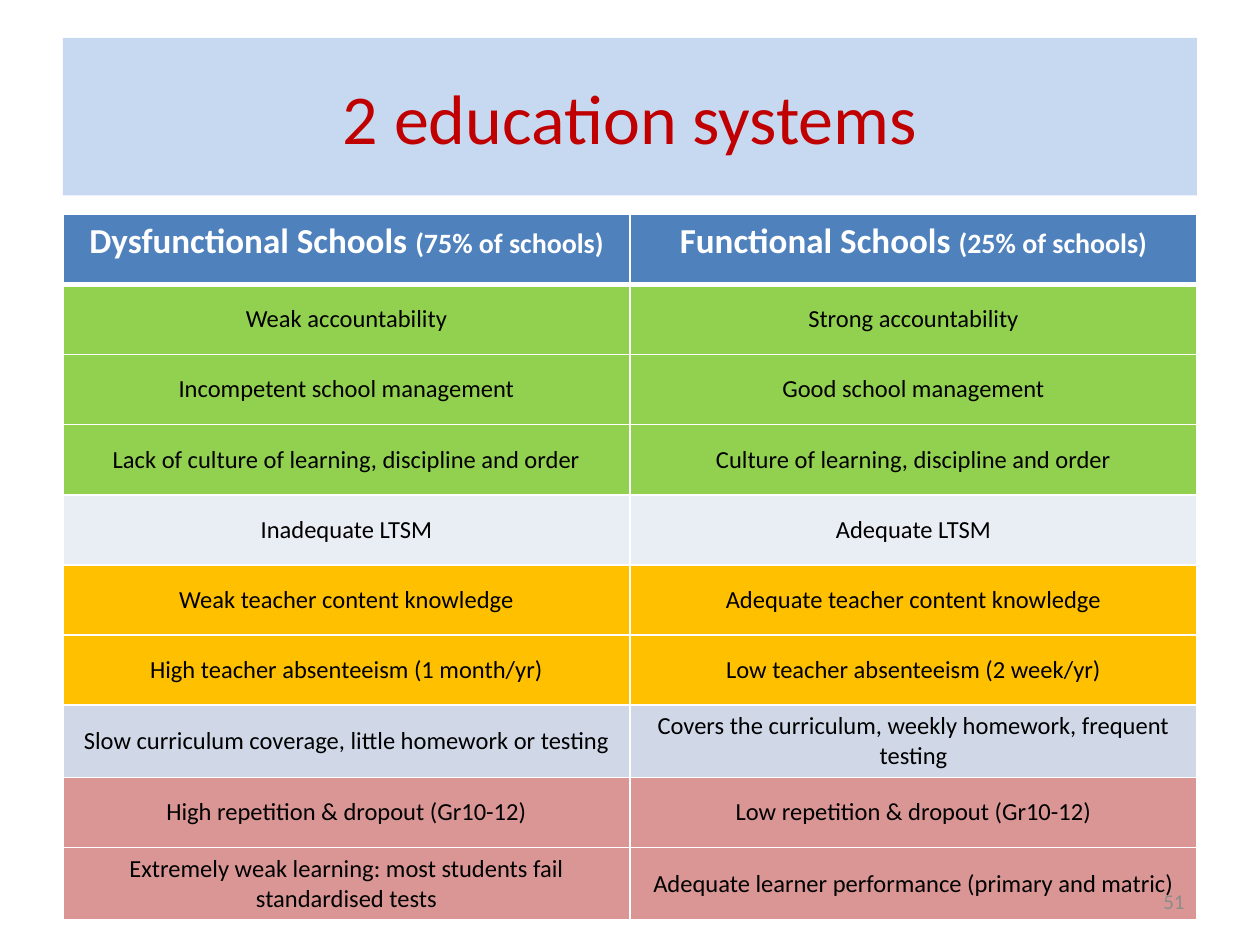
from dataclasses import dataclass

from lxml.etree import SubElement
from pptx import Presentation
from pptx.dml.color import RGBColor
from pptx.enum.shapes import MSO_SHAPE
from pptx.enum.text import MSO_ANCHOR, PP_ALIGN
from pptx.oxml.ns import qn
from pptx.util import Inches, Pt


@dataclass(frozen=True)
class Theme:
    font: str = "Calibri"
    white: str = "FFFFFF"
    black: str = "000000"
    title_text: str = "C00000"
    title_fill: str = "C6D9F1"
    header_fill: str = "4F81BD"
    green: str = "92D050"
    amber: str = "FFC000"
    rose: str = "D99694"
    light_band: str = "E9EDF4"
    dark_band: str = "D0D8E8"
    grey: str = "8C8C8C"
    title_size: int = 40
    header_size: int = 20
    share_size: int = 16
    body_size: int = 14
    number_size: int = 12
    thin: int = 1
    thick: int = 3


class SlideBuilder:
    """Holds the theme and current slide; areas are shares of the slide's size."""

    def __init__(self, deck, theme):
        self.deck = deck
        self.theme = theme
        self.slide = deck.slides.add_slide(deck.slide_layouts[6])

    def area(self, left, top, width, height):
        across, down = self.deck.slide_width, self.deck.slide_height
        return (round(left * across), round(top * down),
                round(width * across), round(height * down))

    def add_text(self, frame, runs, color, align=PP_ALIGN.CENTER, bold=False):
        para = frame.paragraphs[0]
        para.alignment = align
        for text, size in runs:
            span = para.add_run()
            span.text = text
            span.font.name = self.theme.font
            span.font.size = Pt(size)
            span.font.bold = bold
            span.font.color.rgb = RGBColor.from_string(color)

    def title(self, text, area):
        box = self.slide.shapes.add_shape(MSO_SHAPE.RECTANGLE, *self.area(*area))
        box.shadow.inherit = False
        box.fill.solid()
        box.fill.fore_color.rgb = RGBColor.from_string(self.theme.title_fill)
        box.line.fill.background()
        box.text_frame.vertical_anchor = MSO_ANCHOR.MIDDLE
        self.add_text(box.text_frame, [(text, self.theme.title_size)],
                      self.theme.title_text)

    def page_number(self, text, area):
        box = self.slide.shapes.add_textbox(*self.area(*area))
        box.text_frame.word_wrap = True
        box.text_frame.vertical_anchor = MSO_ANCHOR.MIDDLE
        self.add_text(box.text_frame, [(text, self.theme.number_size)],
                      self.theme.grey, PP_ALIGN.RIGHT)

    def cell(self, cell, runs, fill, color, header=False, below_header=False):
        thin, thick = self.theme.thin, self.theme.thick
        self.borders(cell, {"lnL": thin, "lnR": thin,
                            "lnT": thick if below_header else thin,
                            "lnB": thick if header else thin})
        cell.fill.solid()
        cell.fill.fore_color.rgb = RGBColor.from_string(fill)
        cell.vertical_anchor = MSO_ANCHOR.TOP if header else MSO_ANCHOR.MIDDLE
        self.add_text(cell.text_frame, runs, color, bold=header)

    def borders(self, cell, widths):
        properties = cell._tc.get_or_add_tcPr()
        for side, width in widths.items():
            line = SubElement(properties, qn(f"a:{side}"), w=str(Pt(width)))
            solid = SubElement(line, qn("a:solidFill"))
            SubElement(solid, qn("a:srgbClr"), val=self.theme.white)

    def comparison(self, headings, rows, area):
        theme = self.theme
        left, top, width, height = self.area(*area)
        row_count, column_count = len(rows) + 1, len(headings)
        table = self.slide.shapes.add_table(
            row_count, column_count, left, top, width, height).table
        for row in table.rows:
            row.height = height // row_count
        for column, (name, share) in enumerate(headings):
            runs = [(name, theme.header_size), (share, theme.share_size)]
            self.cell(table.cell(0, column), runs, theme.header_fill,
                      theme.white, header=True)
        for number, (fill, *texts) in enumerate(rows, start=1):
            for column, text in enumerate(texts):
                self.cell(table.cell(number, column), [(text, theme.body_size)],
                          fill, theme.black, below_header=number == 1)


def main():
    deck = Presentation()
    deck.slide_width, deck.slide_height = Inches(10), Inches(7.5)
    theme = Theme()
    builder = SlideBuilder(deck, theme)

    # Title band
    builder.title("2 education systems", (0.05, 0.04, 0.9, 1 / 6))

    # Comparison table: row colour, dysfunctional side, functional side
    headings = [("Dysfunctional Schools ", "(75% of schools)"),
                ("Functional Schools ", "(25% of schools)")]
    rows = [
        (theme.green, "Weak accountability", "Strong accountability"),
        (theme.green, "Incompetent school management", "Good school management"),
        (theme.green, "Lack of culture of learning, discipline and order",
         "Culture of learning, discipline and order"),
        (theme.light_band, "Inadequate LTSM", "Adequate LTSM"),
        (theme.amber, "Weak teacher content knowledge",
         "Adequate teacher content knowledge"),
        (theme.amber, "High teacher absenteeism (1 month/yr)",
         "Low teacher absenteeism (2 week/yr)"),
        (theme.dark_band, "Slow curriculum coverage, little homework or testing",
         "Covers the curriculum, weekly homework, frequent testing"),
        (theme.rose, "High repetition & dropout (Gr10-12)",
         "Low repetition & dropout (Gr10-12)"),
        (theme.rose, "Extremely weak learning: most students fail standardised tests",
         "Adequate learner performance (primary and matric)"),
    ]
    builder.comparison(headings, rows, (0.05, 1.7 / 7.5, 0.9, 5.57 / 7.5))

    # Page number
    builder.page_number("51", (0.72, 6.95 / 7.5, 0.23, 0.4 / 7.5))

    deck.save("out.pptx")


if __name__ == "__main__":
    main()
